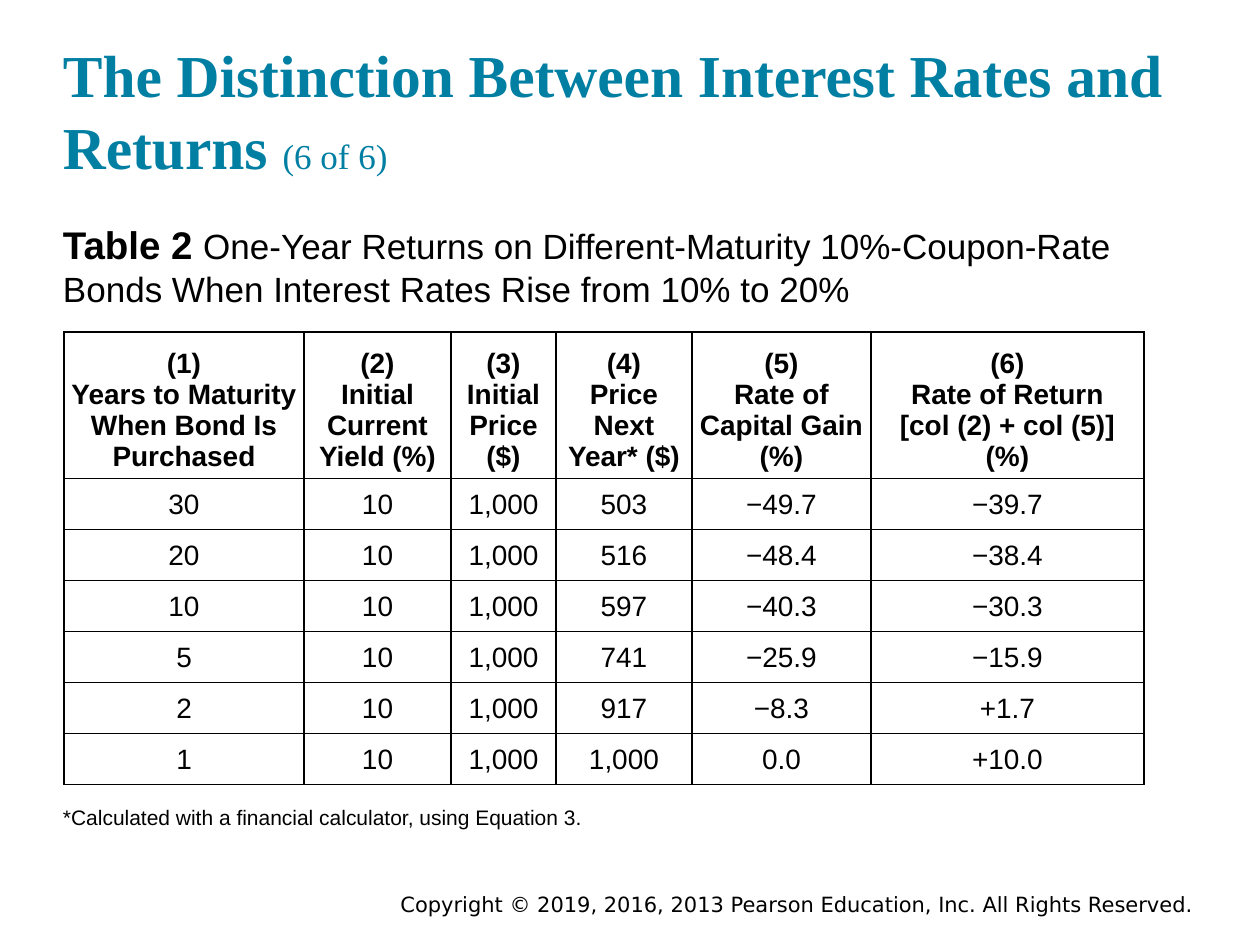
from lxml import etree
from pptx import Presentation
from pptx.dml.color import RGBColor
from pptx.enum.text import MSO_ANCHOR as Anchor, PP_ALIGN as Align
from pptx.oxml.ns import qn
from pptx.util import Pt

EMU_PER_PX = 914400 / 126
TEAL = RGBColor(0x00, 0x7F, 0xA3)
BLACK = RGBColor(0, 0, 0)
SANS, SERIF, FOOTER_FONT = "Arial", "Times New Roman", "DejaVu Sans"

COLUMN_WIDTHS = [240, 147, 105, 136, 179, 273]
HEADER_HEIGHT, ROW_HEIGHT, CELL_MARGIN = 137, 51, 6
HEADERS = [
    ["(1)", "Years to Maturity When Bond Is Purchased"],
    ["(2)", "Initial Current Yield (%)"],
    ["(3)", "Initial Price ($)"],
    ["(4)", "Price Next Year* ($)"],
    ["(5)", "Rate of Capital Gain (%)"],
    ["(6)", "Rate of Return", "[col (2) + col (5)] (%)"],
]
ROWS = [
    ["30", "10", "1,000", "503", "−49.7", "−39.7"],
    ["20", "10", "1,000", "516", "−48.4", "−38.4"],
    ["10", "10", "1,000", "597", "−40.3", "−30.3"],
    ["5", "10", "1,000", "741", "−25.9", "−15.9"],
    ["2", "10", "1,000", "917", "−8.3", "+1.7"],
    ["1", "10", "1,000", "1,000", "0.0", "+10.0"],
]


def px(length):
    return round(length * EMU_PER_PX)


def add_run(paragraph, text, size, font=SANS, color=BLACK, bold=False):
    run = paragraph.add_run()
    run.text = text
    run.font.name = font
    run.font.size = Pt(size)
    run.font.bold = bold
    run.font.color.rgb = color


def add_text_frame(slide, box, margin=0, anchor=Anchor.TOP):
    frame = slide.shapes.add_textbox(*map(px, box)).text_frame
    frame.word_wrap = True
    frame.vertical_anchor = anchor
    frame.margin_left = frame.margin_right = px(margin)
    frame.margin_top = frame.margin_bottom = px(margin)
    return frame


def add_title(slide, box):
    paragraph = add_text_frame(slide, box, anchor=Anchor.BOTTOM).paragraphs[0]
    add_run(paragraph, "The Distinction Between Interest Rates and Returns ",
            34, SERIF, TEAL, bold=True)
    add_run(paragraph, "(6 of 6)", 20, SERIF, TEAL)


def add_caption(slide, box):
    paragraph = add_text_frame(slide, box).paragraphs[0]
    add_run(paragraph, "Table 2 ", 22, bold=True)
    add_run(paragraph, "One-Year Returns on Different-Maturity 10%-Coupon-Rate "
            "Bonds When Interest Rates Rise from 10% to 20%", 20)


def add_footnote(slide, box):
    paragraph = add_text_frame(slide, box).paragraphs[0]
    add_run(paragraph, "*Calculated with a financial calculator, using Equation 3.", 12)


def add_copyright(slide, box):
    paragraph = add_text_frame(slide, box, margin=6).paragraphs[0]
    paragraph.alignment = Align.CENTER
    add_run(paragraph, "Copyright © 2019, 2016, 2013 Pearson Education, Inc. "
            "All Rights Reserved.", 12, FOOTER_FONT)


def add_borders(cell):
    """Draw a 1 pt black line on all four sides of a cell."""
    properties = cell._tc.get_or_add_tcPr()
    for index, side in enumerate(("a:lnL", "a:lnR", "a:lnT", "a:lnB")):
        line = etree.Element(qn(side), w=str(Pt(1)))
        fill = etree.SubElement(line, qn("a:solidFill"))
        etree.SubElement(fill, qn("a:srgbClr"), val=str(BLACK))
        properties.insert(index, line)


def fill_cell(cell, lines, header):
    cell.fill.background()
    add_borders(cell)
    cell.margin_left = cell.margin_right = px(CELL_MARGIN)
    cell.margin_top = cell.margin_bottom = px(CELL_MARGIN)
    cell.vertical_anchor = Anchor.BOTTOM if header else Anchor.TOP
    for index, text in enumerate(lines):
        frame = cell.text_frame
        paragraph = frame.add_paragraph() if index else frame.paragraphs[0]
        paragraph.alignment = Align.CENTER
        if not header:
            paragraph.line_spacing = 1.15
        add_run(paragraph, text, 16, bold=header)


def add_returns_table(slide, left, top):
    rows = [HEADERS] + [[[value] for value in row] for row in ROWS]
    heights = [HEADER_HEIGHT] + [ROW_HEIGHT] * len(ROWS)
    table = slide.shapes.add_table(
        len(rows), len(COLUMN_WIDTHS), px(left), px(top),
        px(sum(COLUMN_WIDTHS)), px(sum(heights))).table
    table.horz_banding = False
    for column, width in zip(table.columns, COLUMN_WIDTHS):
        column.width = px(width)
    for row_index, (row, height) in enumerate(zip(rows, heights)):
        table.rows[row_index].height = px(height)
        for column_index, lines in enumerate(row):
            fill_cell(table.cell(row_index, column_index), lines, row_index == 0)


def main():
    presentation = Presentation()
    presentation.slide_width, presentation.slide_height = px(1260), px(945)
    slide = presentation.slides.add_slide(presentation.slide_layouts[6])
    add_copyright(slide, (372, 886, 850, 38))
    add_title(slide, (63, 30, 1134, 151))
    add_caption(slide, (63, 221, 1134, 94))
    add_returns_table(slide, 64, 332)
    add_footnote(slide, (63, 804, 997, 47))
    presentation.save("out.pptx")


if __name__ == "__main__":
    main()
